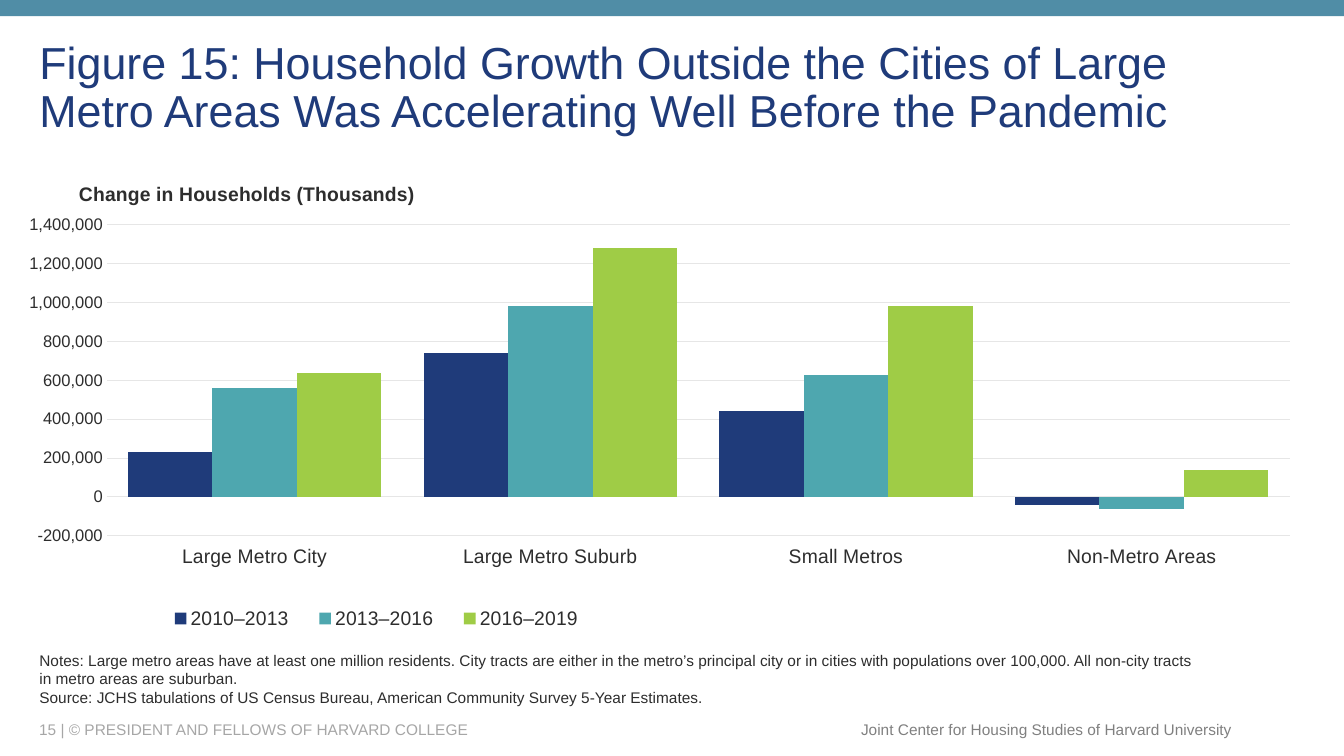
from lxml.etree import SubElement
from pptx import Presentation
from pptx.chart.data import CategoryChartData
from pptx.dml.color import RGBColor
from pptx.enum.chart import (XL_CHART_TYPE as ChartType, XL_LEGEND_POSITION as LegendSpot,
                             XL_TICK_LABEL_POSITION as LabelSpot, XL_TICK_MARK as Tick)
from pptx.enum.shapes import MSO_SHAPE as Preset
from pptx.enum.text import MSO_ANCHOR as Anchor, MSO_AUTO_SIZE as AutoSize, PP_ALIGN as Align
from pptx.oxml.ns import qn
from pptx.util import Inches, Pt

NAVY, TEAL, GREEN, BAND = "1F3B7A", "4EA7AF", "9FCC46", "508DA6"
INK, GRID, PALE, GREY = "2D2D2D", "E6E6E6", "A6A6A6", "808080"

TITLE = ("Figure 15: Household Growth Outside the Cities of Large "
         "Metro Areas Was Accelerating Well Before the Pandemic")
NOTES = [
    "Notes: Large metro areas have at least one million residents. City tracts are either in the "
    "metro’s principal city or in cities with populations over 100,000. All non-city tracts "
    "in metro areas are suburban.",
    "Source: JCHS tabulations of US Census Bureau, American Community Survey 5-Year Estimates.",
]
CATEGORIES = ["Large Metro City", "Large Metro Suburb", "Small Metros", "Non-Metro Areas"]
SERIES = [
    ("2010–2013", NAVY, (230000, 740000, 440000, -40000)),
    ("2013–2016", TEAL, (560000, 980000, 630000, -60000)),
    ("2016–2019", GREEN, (640000, 1280000, 980000, 140000)),
]


def rgb(code):
    """Turn a hex string into a colour."""
    return RGBColor.from_string(code)


def apply(target, values):
    """Set every attribute named in a dict of format values."""
    for name, value in values.items():
        setattr(target, name, value)


def style_font(font, size, color, bold=False):
    """Give a font the slide's typeface, a size, a colour and a weight."""
    apply(font, {"name": "Arial", "size": Pt(size), "bold": bold})
    font.color.rgb = rgb(color)


def place(shape, box):
    """Move a shape to a box of left, top, width and height in inches."""
    apply(shape, dict(zip(("left", "top", "width", "height"), map(Inches, box))))


def write(shape, lines, size, color, anchor, align=Align.LEFT, spacing=1.0, wrap=True):
    """Fill a shape with plain paragraphs of one style."""
    frame = shape.text_frame
    apply(frame, {"text": "\n".join(lines), "word_wrap": wrap,
                  "auto_size": AutoSize.NONE, "vertical_anchor": anchor})
    for para in frame.paragraphs:
        props = para._p.get_or_add_pPr()
        props.set("marL", "0")
        props.set("indent", "0")
        SubElement(props, qn("a:buNone"))
        apply(para, {"alignment": align, "line_spacing": spacing,
                     "space_before": Pt(0), "space_after": Pt(0)})
        style_font(para.font, size, color)


def add_band(page, box):
    """Draw the coloured band across the top."""
    band = page.shapes.add_shape(Preset.RECTANGLE, *map(Inches, box))
    band.shadow.inherit = False
    band.fill.solid()
    band.fill.fore_color.rgb = rgb(BAND)
    band.line.fill.background()


def add_footer(page, box):
    """Write the copyright line at the left and the centre's name at the right."""
    left, top, width, height = box
    name_width = 3.9
    copyright_box = page.shapes.add_textbox(
        *map(Inches, (left, top, width - name_width, height)))
    write(copyright_box, ["15 | © PRESIDENT AND FELLOWS OF HARVARD COLLEGE"],
          11, PALE, Anchor.MIDDLE)
    name_box = page.shapes.add_textbox(
        *map(Inches, (left + width - name_width, top, name_width, height)))
    write(name_box, ["Joint Center for Housing Studies of Harvard University"],
          11, GREY, Anchor.MIDDLE, Align.RIGHT, wrap=False)


def set_layout(part, index, inner=False, **fractions):
    """Fix a chart part's position as fractions of the chart's box."""
    for old in part.findall(qn("c:layout")):
        part.remove(old)
    layout = part.makeelement(qn("c:layout"))
    part.insert(index, layout)
    manual = SubElement(layout, qn("c:manualLayout"))
    values = {"layoutTarget": "inner"} if inner else {}
    values.update({"xMode": "edge", "yMode": "edge"}, **fractions)
    for name, value in values.items():
        SubElement(manual, qn("c:" + name)).set("val", str(value))


def style_axes(chart):
    """Format the category and value axes and the gridlines."""
    categories, values = chart.category_axis, chart.value_axis
    for axis, size in ((categories, 14), (values, 12)):
        apply(axis, {"major_tick_mark": Tick.NONE, "minor_tick_mark": Tick.NONE})
        style_font(axis.tick_labels.font, size, INK)
    categories.tick_label_position = LabelSpot.LOW
    apply(values, {"minimum_scale": -200000, "maximum_scale": 1400000,
                   "major_unit": 200000, "has_major_gridlines": True})
    apply(values.tick_labels, {"number_format": "#,##0", "number_format_is_linked": False})
    values.format.line.fill.background()
    for line in (categories.format.line, values.major_gridlines.format.line):
        line.color.rgb = rgb(GRID)
        line.width = Pt(0.75)


def add_growth_chart(page, box):
    """Add the clustered columns of household growth."""
    data = CategoryChartData(number_format="#,##0")
    data.categories = CATEGORIES
    for name, _, values in SERIES:
        data.add_series(name, values)
    chart = page.shapes.add_chart(ChartType.COLUMN_CLUSTERED, *map(Inches, box), data).chart
    style_font(chart.font, 10, "5A5A5A")

    plot = chart.plots[0]
    apply(plot, {"gap_width": 50, "overlap": 0, "vary_by_categories": False})
    for series, (_, color, _) in zip(plot.series, SERIES):
        series.invert_if_negative = False
        series.format.fill.solid()
        series.format.fill.fore_color.rgb = rgb(color)
    style_axes(chart)

    heading = chart.chart_title.text_frame
    heading.text = "Change in Households (Thousands)"
    style_font(heading.paragraphs[0].runs[0].font, 14, INK, bold=True)
    chart.has_legend = True
    apply(chart.legend, {"position": LegendSpot.BOTTOM, "include_in_layout": False})
    style_font(chart.legend.font, 14, INK)

    root = chart.element
    set_layout(root.find(".//" + qn("c:plotArea")), 0, inner=True,
               x=0.045, y=0.111, w=0.943, h=0.671)
    set_layout(root.find(".//" + qn("c:title")), 1, x=0.02, y=0.01)
    set_layout(root.find(".//" + qn("c:legend")), 1, x=0.08, y=0.92, w=0.36, h=0.08)


def build_figure_page(deck):
    """Lay out the figure slide."""
    page = deck.slides.add_slide(deck.slide_layouts[1])
    add_band(page, (0, 0, 13.33, 0.16))
    add_footer(page, (0.29, 7.09, 12.03, 0.29))
    title, notes = page.shapes.title, page.placeholders[1]
    place(title, (0.29, 0.4, 12.65, 0.97))
    write(title, [TITLE], 32, NAVY, Anchor.MIDDLE, spacing=0.9)
    add_growth_chart(page, (0.29, 1.72, 12.65, 4.6))
    place(notes, (0.29, 6.48, 11.75, 0.58))
    write(notes, NOTES, 11, INK, Anchor.BOTTOM)


def main():
    """Build and save the deck."""
    deck = Presentation()
    apply(deck, {"slide_width": Inches(13.33), "slide_height": Inches(7.5)})
    build_figure_page(deck)
    deck.save("out.pptx")


if __name__ == "__main__":
    main()
